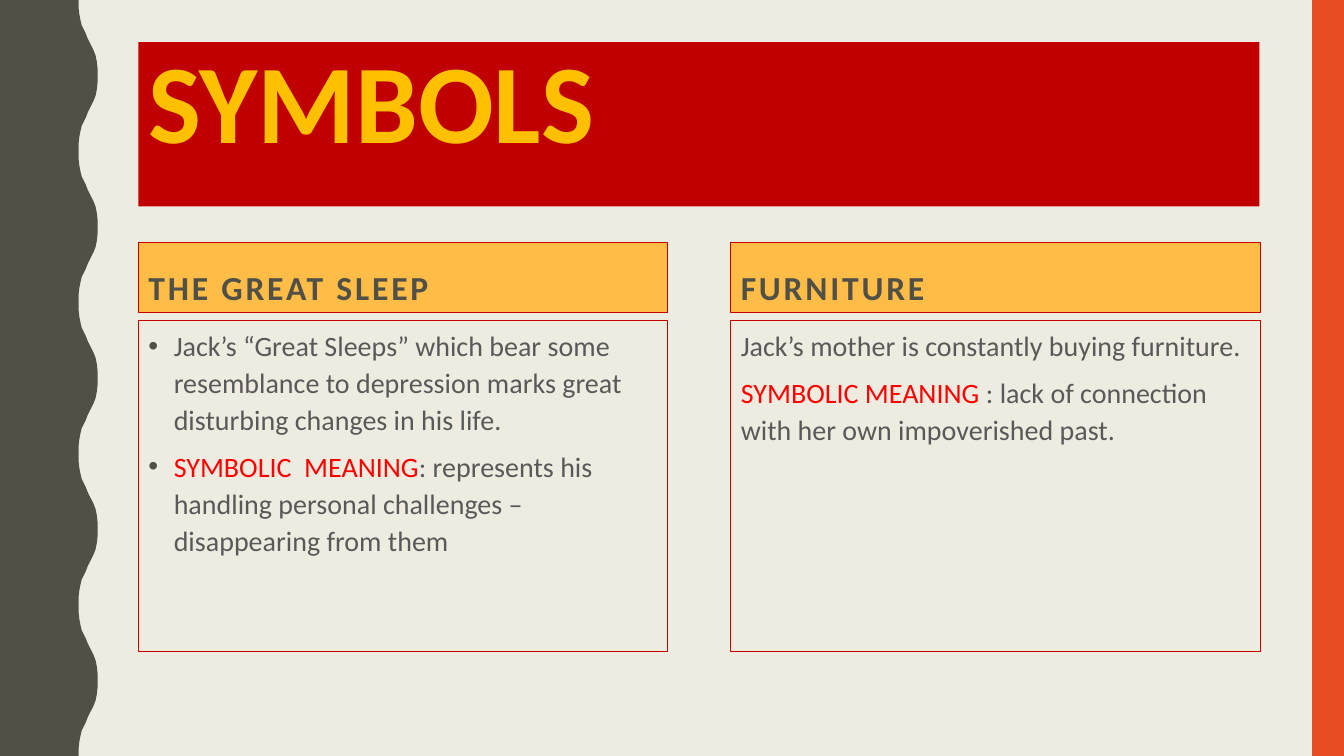
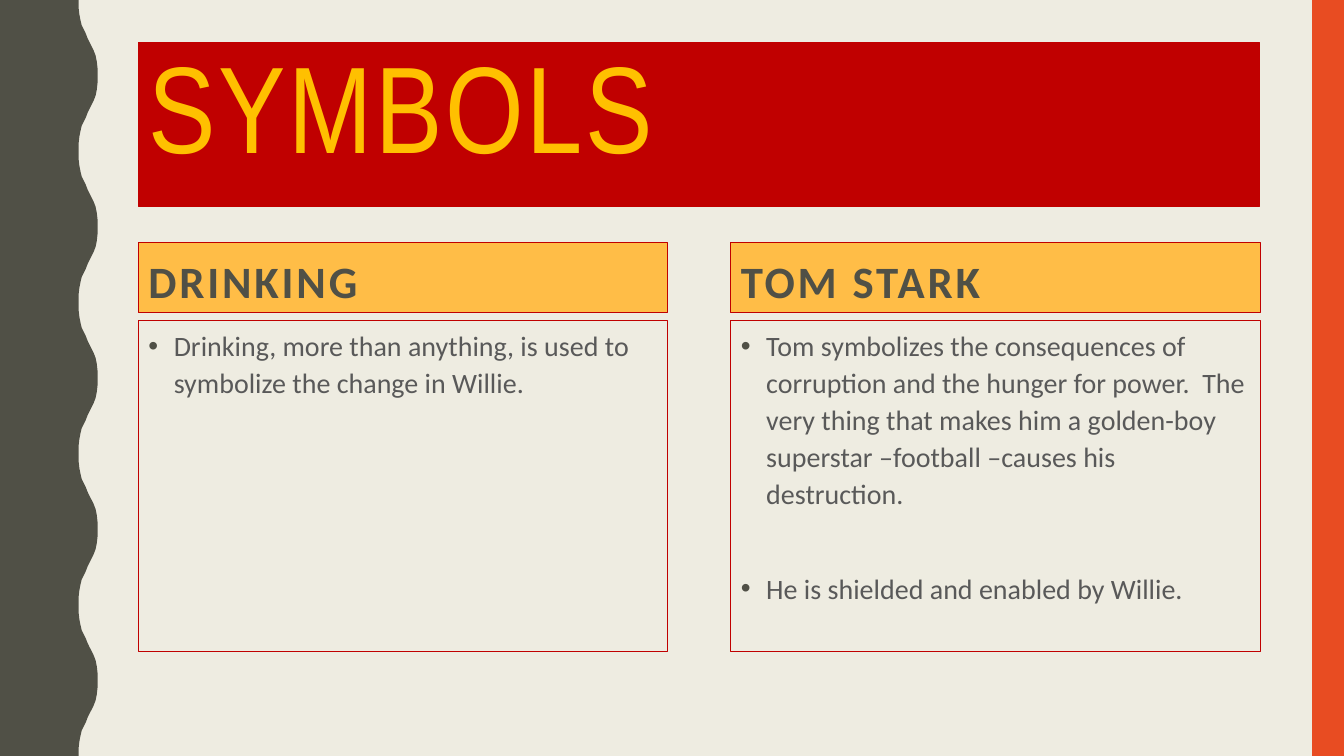
from lxml import etree
from pptx import Presentation
from pptx.dml.color import RGBColor as RGB
from pptx.enum.shapes import MSO_SHAPE as SHAPE
from pptx.enum.text import MSO_ANCHOR as ANCHOR, MSO_AUTO_SIZE as AUTO, PP_ALIGN as ALIGN
from pptx.oxml.ns import qn
from pptx.util import Cm, Pt

COLORS = {"paper": "EEECE1", "olive": "505046", "orange": "E84C22", "red": "C00000",
          "gold": "FFC000", "amber": "FFBD47", "text": "595959", "accent": "FF0000"}
C = {name: RGB.from_string(value) for name, value in COLORS.items()}

# Text formats
HEADING = {"name": "Calibri", "bold": True}
BODY = {"name": "Calibri", "size": Pt(20), "bold": False}
FRAME = {"word_wrap": True, "auto_size": AUTO.NONE}
TITLE_PARA = {"alignment": ALIGN.LEFT, "line_spacing": 0.9}
HEADING_PARA = {"space_before": Pt(7)}

# Layout grid in cm
LEFT, COL_W, COL_STEP = 3.49, 13.34, 14.93
TITLE_BOX = (LEFT, 1.06, 28.25, 4.14)
HEAD_TOP, HEAD_H = 6.12, 1.75
BODY_TOP, BODY_H = 8.08, 8.33

# Slide contents: a body paragraph is (bullet, space before, [(text, colour), ...])
SLIDES = [
    {"title_font": {"name": "Calibri", "size": Pt(80), "bold": True},
     "title_spacing": 0, "title_outline": True, "head_size": 24,
     "columns": [
         ("THE GREAT SLEEP", [
             (True, 7, [("Jack’s “Great Sleeps” which bear some resemblance to depression "
                         "marks great disturbing changes in his life.", "text")]),
             (True, 7, [("SYMBOLIC  MEANING", "accent"),
                        (": represents his handling personal challenges – "
                         "disappearing from them", "text")])]),
         ("FURNITURE", [
             (False, 7, [("Jack’s mother is constantly buying furniture.", "text")]),
             (False, 7, [("SYMBOLIC MEANING ", "accent"),
                         (": lack of connection with her own impoverished past.", "text")])])]},
    {"title_font": {"name": "Arial Narrow", "size": Pt(88), "bold": False},
     "title_spacing": 2, "title_outline": False, "head_size": 32,
     "columns": [
         ("DRINKING", [
             (True, 7, [("Drinking, more than anything, is used to symbolize "
                         "the change in Willie.", "text")])]),
         ("TOM STARK", [
             (True, 7, [("Tom symbolizes the consequences of corruption and the hunger for "
                         "power.  The very thing that makes him a golden-boy superstar "
                         "–football –causes his destruction.", "text")]),
             (True, 41, [("He is shielded and enabled by Willie.", "text")])])]},
]


def set_all(obj, values):
    for name, value in values.items():
        setattr(obj, name, value)


def add_run(p, text, color, font, spacing=0):
    r = p.add_run()
    r.text = text
    set_all(r.font, font)
    r.font.color.rgb = C[color]
    if spacing:
        r.font._element.set("spc", str(spacing * 100))
    return r


prs = Presentation()
prs.slide_width, prs.slide_height = Cm(33.87), Cm(19.05)
layout = prs.slide_layouts[5]

# Shared background
bg = prs.slide_master.background.fill
bg.solid()
bg.fore_color.rgb = C["paper"]

slides = [prs.slides.add_slide(layout) for _ in SLIDES]

# Wavy left band: half a wave, mirrored and repeated down the slide
HALF_WAVE = [(1.98, 0), (1.98, 0.18), (2, 0.36), (2.03, 0.51), (2.06, 0.64),
             (2.11, 0.74), (2.16, 0.84), (2.21, 0.97), (2.26, 1.07), (2.31, 1.17),
             (2.36, 1.27), (2.41, 1.4), (2.44, 1.55), (2.46, 1.73), (2.46, 1.9)]
PERIOD = 3.81
wave = HALF_WAVE + [(x, PERIOD - y) for x, y in reversed(HALF_WAVE)]
edge = [(Cm(x), Cm(y + i * PERIOD)) for i in range(5) for x, y in wave]
builder = slides[0].shapes.build_freeform(0, 0)
builder.add_line_segments(edge + [(0, prs.slide_height)], close=True)
band = builder.convert_to_shape()

# Right stripe
stripe = slides[0].shapes.add_shape(SHAPE.RECTANGLE, Cm(33.07), 0, Cm(0.8), prs.slide_height)

# Both decorations belong to the layout, behind its placeholders
for index, (sp, color) in enumerate([(band, "olive"), (stripe, "orange")]):
    sp.shadow.inherit = False
    sp.fill.solid()
    sp.fill.fore_color.rgb = C[color]
    sp.line.fill.background()
    layout.shapes.element.insert(2 + index, sp.element)

for s, content in zip(slides, SLIDES):
    # Title
    title = s.shapes.title
    set_all(title, dict(zip(("left", "top", "width", "height"), map(Cm, TITLE_BOX))))
    title.fill.solid()
    title.fill.fore_color.rgb = C["red"]
    tf = title.text_frame
    set_all(tf, {**FRAME, "vertical_anchor": ANCHOR.TOP})
    p = tf.paragraphs[0]
    set_all(p, TITLE_PARA)
    r = add_run(p, "SYMBOLS", "gold", content["title_font"], content["title_spacing"])
    if content["title_outline"]:
        ln = etree.Element(qn("a:ln"), w=str(Pt(1.75)))
        fill = etree.SubElement(ln, qn("a:solidFill"))
        etree.SubElement(fill, qn("a:srgbClr"), val=COLORS["amber"])
        r.font._element.insert(0, ln)
    else:
        title.line.color.rgb = C["red"]
        title.line.width = Pt(0.75)

    for col, (heading, paragraphs) in enumerate(content["columns"]):
        # Column boxes
        x = Cm(LEFT + col * COL_STEP)
        head = s.shapes.add_textbox(x, Cm(HEAD_TOP), Cm(COL_W), Cm(HEAD_H))
        body = s.shapes.add_textbox(x, Cm(BODY_TOP), Cm(COL_W), Cm(BODY_H))
        for box in (head, body):
            box.line.color.rgb = C["red"]
            box.line.width = Pt(0.75)
            set_all(box.text_frame, FRAME)

        # Column heading
        head.fill.solid()
        head.fill.fore_color.rgb = C["amber"]
        head.text_frame.vertical_anchor = ANCHOR.BOTTOM
        p = head.text_frame.paragraphs[0]
        set_all(p, HEADING_PARA)
        add_run(p, heading, "olive", {**HEADING, "size": Pt(content["head_size"])}, 2)

        # Column text
        tf = body.text_frame
        for i, (bullet, before, runs) in enumerate(paragraphs):
            p = tf.add_paragraph() if i else tf.paragraphs[0]
            set_all(p, {"line_spacing": 1.1, "space_before": Pt(before)})
            if bullet:
                pPr = p._p.get_or_add_pPr()
                pPr.set("marL", str(Cm(0.64)))
                pPr.set("indent", str(-Cm(0.64)))
                clr = etree.SubElement(pPr, qn("a:buClr"))
                etree.SubElement(clr, qn("a:srgbClr"), val=COLORS["olive"])
                etree.SubElement(pPr, qn("a:buFont"), typeface="Arial")
                etree.SubElement(pPr, qn("a:buChar"), char="•")
            for text, color in runs:
                add_run(p, text, color, BODY)

prs.save("out.pptx")
